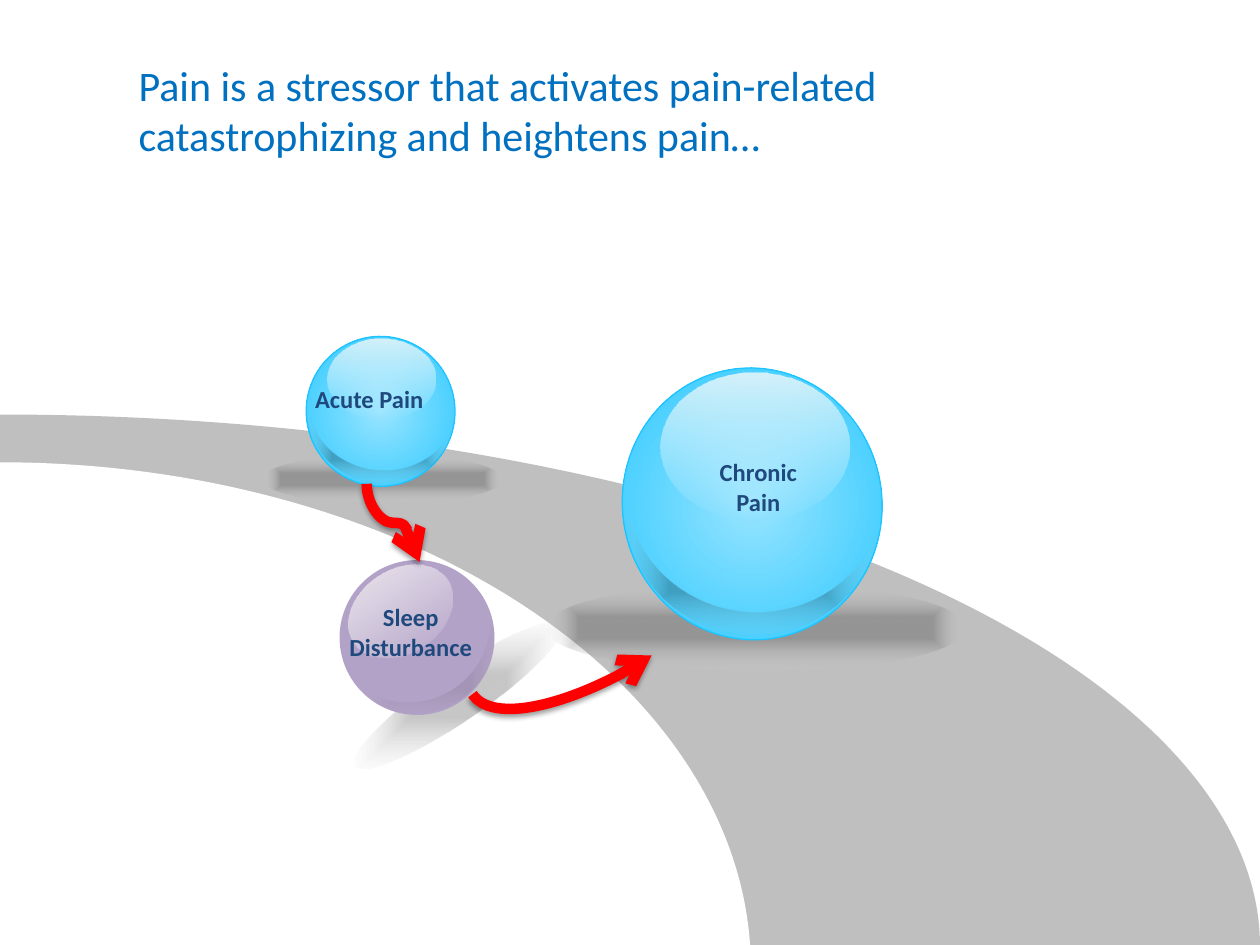
from pptx import Presentation
from pptx.dml.color import RGBColor
from pptx.enum import shapes, text
from pptx.oxml import parse_xml
from pptx.oxml.ns import nsdecls, qn
from pptx.util import Pt

COLORS = {"road": "BFBFBF", "white": "FFFFFF", "title": "0070C0", "label": "1F497D",
          "purple": "B3A2C7", "blue": "1DC4FF", "arrow": "FF0000"}
SHAPE = shapes.MSO_SHAPE
CENTER = '<a:path path="{}"><a:fillToRect l="50000" t="50000" r="50000" b="50000"/></a:path>'

# Gradients: stops of (position, colour, opacity in percent), then direction
SHADOW = ([(24, "000000", 22), (100, "FFFFFF", 0)], CENTER.format("shape"))
BALL = ([(0, "97E4FF", 100), (100, "1DC4FF", 100)], CENTER.format("circle"))
GLOSS = ([(0, "FFFFFF", 0), (100, "FFFCF9", 77)], '<a:lin ang="16200000" scaled="0"/>')
DARK_RIM = ([(24, "000000", 24), (100, "FFFFFF", 0)], CENTER.format("shape"))
LIGHT_RIM = ([(24, "000000", 8), (100, "FFFFFF", 0)], CENTER.format("shape"))


def add_filled(kind, box, fill, rotation=0, line=None):
    """Add a shape whose fill is a colour name or a gradient."""
    shape = slide.shapes.add_shape(kind, *map(Pt, box))
    shape.shadow.inherit = False
    shape.rotation = rotation
    if isinstance(fill, str):
        shape.fill.solid()
        shape.fill.fore_color.rgb = RGBColor.from_string(COLORS[fill])
    else:
        stops, direction = fill
        stop_xml = "".join(
            f'<a:gs pos="{position * 1000}"><a:srgbClr val="{color}">'
            f'<a:alpha val="{opacity * 1000}"/></a:srgbClr></a:gs>'
            for position, color, opacity in stops)
        gradient = parse_xml(f'<a:gradFill {nsdecls("a")} rotWithShape="1">'
                             f'<a:gsLst>{stop_xml}</a:gsLst>{direction}</a:gradFill>')
        shape._element.spPr.find(qn("a:prstGeom")).addnext(gradient)
    if line:
        shape.line.color.rgb = RGBColor.from_string(COLORS[line])
        shape.line.width = Pt(0.75)
    else:
        shape.line.fill.background()
    return shape


def write_text(shape, words, size, color, bold, alignment):
    """Write one wrapped paragraph from the top of the shape."""
    frame = shape.text_frame
    frame.text = words
    frame.word_wrap = True
    frame.vertical_anchor = text.MSO_ANCHOR.TOP
    paragraph = frame.paragraphs[0]
    paragraph.alignment = alignment
    font = paragraph.runs[0].font
    formats = {"name": "Calibri", "size": Pt(size), "bold": bold}
    for name, value in formats.items():
        setattr(font, name, value)
    font.color.rgb = RGBColor.from_string(COLORS[color])


presentation = Presentation()
presentation.slide_width, presentation.slide_height = Pt(720), Pt(540)
slide = presentation.slides.add_slide(presentation.slide_layouts[5])

# Title
title = slide.shapes.title
title.left, title.top, title.width, title.height = map(Pt, (72, 30.2, 534.2, 94.3))
write_text(title, "Pain is a stressor that activates pain-related catastrophizing "
           "and heightens pain…", 24, "title", False, text.PP_ALIGN.LEFT)

# Road: a grey quarter ellipse with a white one on top
for box, fill, start, end in [
        ((-720.7, 236.9, 1440.7, 607.7), "road", 161.98, 0.08),
        ((-429.1, 264.2, 858.2, 578.2), "white", 162.01, 0.07)]:
    arc = add_filled(SHAPE.ARC, box, fill)
    arc.adjustments[0], arc.adjustments[1] = start, end

# Spheres: floor shadow, ball, gloss, rim and label, each with its box and rotation
spheres = [
    {"label": "Acute Pain", "fill": BALL, "line": "blue", "rim_fill": DARK_RIM,
     "shadow": ((149.8, 259.9, 137.5, 28.1), 0), "ball": ((175, 192.2, 85, 85.7), 350.9),
     "gloss": ((187.2, 193.7, 61.9, 46.1), 0), "rim": ((197.3, 215.3, 37.4, 82.8), 275.9),
     "label_box": (167.8, 216, 86.4, 24.5)},
    {"label": "Sleep Disturbance", "fill": "purple", "line": "purple", "rim_fill": LIGHT_RIM,
     "shadow": ((190.8, 383, 141.8, 28.8), 325.9), "ball": ((194.4, 320.4, 87.8, 87.8), 316.8),
     "gloss": ((196.6, 325.4, 64.1, 47.5), 325.9), "rim": ((230.4, 342, 38.9, 85.7), 241.8),
     "label_box": (177.8, 340.6, 113.8, 41)},
    {"label": "Chronic Pain", "fill": BALL, "line": "blue", "rim_fill": DARK_RIM,
     "shadow": ((311.8, 333.4, 239.8, 50.4), 0), "ball": ((355.7, 210.2, 148.3, 155.5), 350.9),
     "gloss": ((377.3, 213.1, 108, 84.2), 0), "rim": ((392.4, 256.3, 68.4, 144), 275.9),
     "label_box": (390.2, 257.8, 86.4, 41)},
]
for sphere in spheres:
    for part, kind, fill, line in [
            ("shadow", SHAPE.OVAL, SHADOW, None),
            ("ball", SHAPE.OVAL, sphere["fill"], sphere["line"]),
            ("gloss", SHAPE.OVAL, GLOSS, None),
            ("rim", SHAPE.MOON, sphere["rim_fill"], None)]:
        box, rotation = sphere[part]
        shape = add_filled(kind, box, fill, rotation, line)
        if part == "rim":
            shape.adjustments[0] = 0.19
    label = slide.shapes.add_textbox(*map(Pt, sphere["label_box"]))
    write_text(label, sphere["label"], 14, "label", True, text.PP_ALIGN.CENTER)
    label.text_frame.auto_size = text.MSO_AUTO_SIZE.SHAPE_TO_FIT_TEXT

# Curved arrows: drawn right to left in their own frame, then rotated
for left, top, width, height, rotation, preset in [
        (301.7, 337, 38.9, 97.2, 236, "curvedConnector2"),
        (202.3, 283.7, 44.6, 30.2, 270, "curvedConnector3")]:
    arrow = slide.shapes.add_connector(
        shapes.MSO_CONNECTOR.CURVE, Pt(left + width), Pt(top), Pt(left), Pt(top + height))
    arrow.line.color.rgb = RGBColor.from_string(COLORS["arrow"])
    arrow.line.width = Pt(6)
    properties = arrow._element.spPr
    properties.find(qn("a:xfrm")).set("rot", str(rotation * 60000))
    properties.find(qn("a:prstGeom")).set("prst", preset)
    properties.find(qn("a:ln")).append(parse_xml(f'<a:tailEnd {nsdecls("a")} type="arrow"/>'))
    properties.append(parse_xml(
        f'<a:effectLst {nsdecls("a")}><a:outerShdw blurRad="{Pt(3.1)}" dist="{Pt(1.6)}" '
        'dir="5400000" rotWithShape="0"><a:srgbClr val="000000"><a:alpha val="38000"/>'
        '</a:srgbClr></a:outerShdw></a:effectLst>'))

presentation.save("out.pptx")
